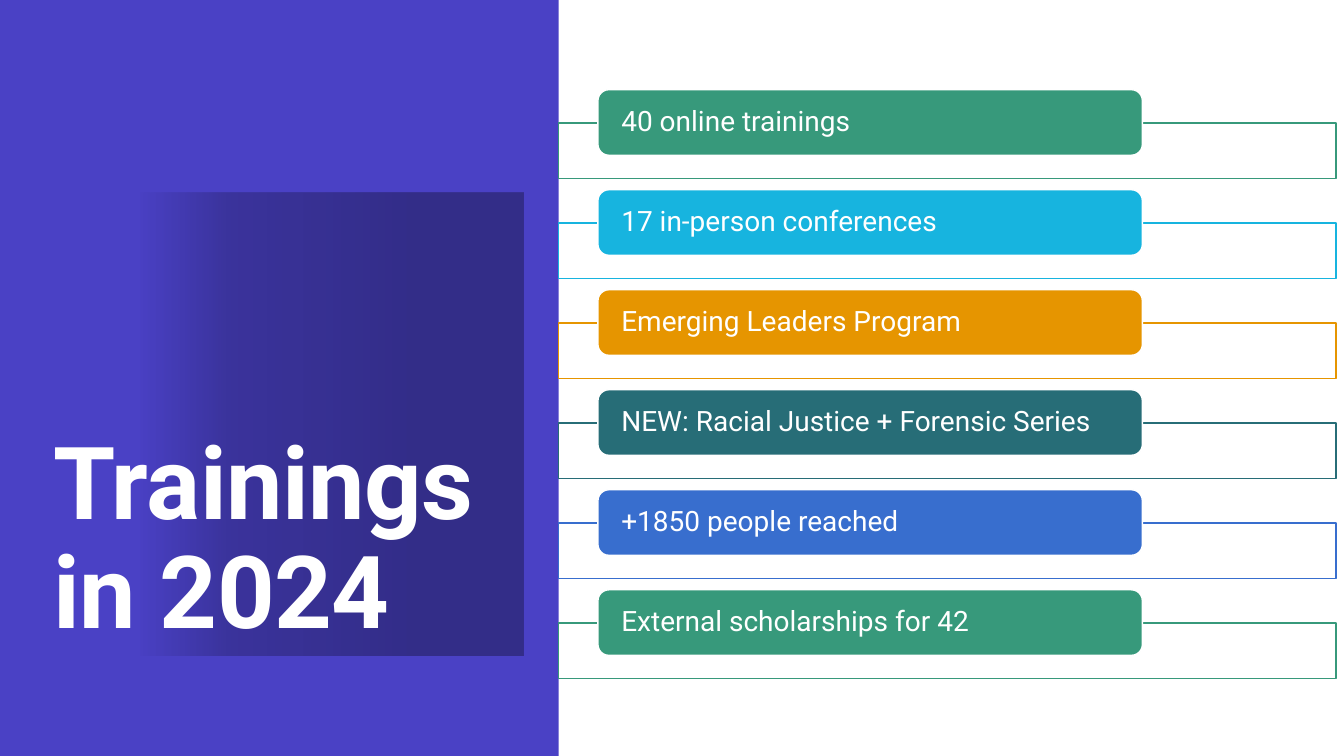
import dataclasses
import lxml.etree
import pptx
import pptx.dml.color
import pptx.enum.shapes
import pptx.enum.text
import pptx.oxml.ns
import pptx.shapes.autoshape
import pptx.util

RGBColor = pptx.dml.color.RGBColor
Kind = pptx.enum.shapes.MSO_SHAPE
Anchor = pptx.enum.text.MSO_ANCHOR
Shape = pptx.shapes.autoshape.Shape
qn = pptx.oxml.ns.qn

WHITE = RGBColor(0xFF, 0xFF, 0xFF)
PURPLE = RGBColor(0x4A, 0x41, 0xC5)
GREEN = RGBColor(0x37, 0x99, 0x7B)
CYAN = RGBColor(0x17, 0xB4, 0xDF)
AMBER = RGBColor(0xE6, 0x95, 0x00)
TEAL = RGBColor(0x27, 0x6D, 0x77)
BLUE = RGBColor(0x38, 0x6E, 0xCE)

FONT = "Roboto"
WIDTH = pptx.util.Inches(13.33)
HEIGHT = pptx.util.Inches(7.5)
STEP = 13.23


@dataclasses.dataclass(frozen=True)
class Box:
    """Left, top, width and height as percent of the slide."""

    left: float
    top: float
    width: float
    height: float

    def down(self, row: int) -> "Box":
        return dataclasses.replace(self, top=self.top + row * STEP)


@dataclasses.dataclass(frozen=True)
class Item:
    label: str
    color: RGBColor


PANEL = Box(0, 0, 41.56, 100)
TITLE = Box(3.23, 25.47, 35.71, 61.2)
FRAME = Box(41.56, 16.27, 57.84, 7.33)
BAR = Box(44.49, 11.87, 40.51, 8.67)

FADE = [(0, 0), (20, 0), (38, 20), (77, 30), (100, 30)]

ITEMS = [
    Item("40 online trainings", GREEN),
    Item("17 in-person conferences", CYAN),
    Item("Emerging Leaders Program", AMBER),
    Item("NEW: Racial Justice + Forensic Series", TEAL),
    Item("+1850 people reached", BLUE),
    Item("External scholarships for 42", GREEN),
]


def add_box(slide, kind: Kind, box: Box, fill: RGBColor,
            line: RGBColor | None = None) -> Shape:
    shape = slide.shapes.add_shape(
        kind,
        round(WIDTH * box.left / 100), round(HEIGHT * box.top / 100),
        round(WIDTH * box.width / 100), round(HEIGHT * box.height / 100))
    shape.shadow.inherit = False
    shape.fill.solid()
    shape.fill.fore_color.rgb = fill
    if line is None:
        shape.line.fill.background()
    else:
        shape.line.color.rgb = line
        shape.line.width = pptx.util.Pt(1)
    return shape


def set_alpha(color: lxml.etree._Element, share: int) -> None:
    lxml.etree.SubElement(color, qn("a:alpha"), val=str(share * 1000))


def set_fade(shape: Shape) -> None:
    shape.fill.gradient()
    shape.fill.gradient_angle = 0
    stops = shape.element.spPr.find(qn("a:gradFill")).find(qn("a:gsLst"))
    for old in list(stops):
        stops.remove(old)
    for place, share in FADE:
        stop = lxml.etree.SubElement(stops, qn("a:gs"), pos=str(place * 1000))
        color = lxml.etree.SubElement(stop, qn("a:srgbClr"), val="000000")
        set_alpha(color, share)


def set_text(shape: Shape, text: str, size: int, anchor: Anchor,
             bold: bool = False) -> None:
    frame = shape.text_frame
    frame.text = text
    frame.word_wrap = True
    frame.vertical_anchor = anchor
    para = frame.paragraphs[0]
    para.alignment = pptx.enum.text.PP_ALIGN.LEFT
    para.line_spacing = 0.9
    font = para.runs[0].font
    font.name = FONT
    font.size = pptx.util.Pt(size)
    font.bold = bold
    font.color.rgb = WHITE


def add_title(slide) -> None:
    title = add_box(slide, Kind.RECTANGLE, TITLE, PURPLE)
    set_fade(title)
    set_text(title, "Trainings in 2024", 72, Anchor.BOTTOM, bold=True)
    run = title.text_frame.paragraphs[0].runs[0]
    run.font._element.set("spc", "-40")


def add_item(slide, item: Item, row: int) -> None:
    frame = add_box(slide, Kind.RECTANGLE, FRAME.down(row), WHITE, item.color)
    set_alpha(frame.element.spPr.find(qn("a:solidFill"))[0], 90)
    bar = add_box(slide, Kind.ROUNDED_RECTANGLE, BAR.down(row), item.color, WHITE)
    set_text(bar, item.label, 20, Anchor.MIDDLE)
    text = bar.text_frame
    text.margin_left = text.margin_right = pptx.util.Inches(0.2)
    text.margin_top = text.margin_bottom = 0


def main() -> None:
    deck = pptx.Presentation()
    deck.slide_width = WIDTH
    deck.slide_height = HEIGHT
    slide = deck.slides.add_slide(deck.slide_layouts[6])
    add_box(slide, Kind.RECTANGLE, PANEL, PURPLE)
    add_title(slide)
    for row, item in enumerate(ITEMS):
        add_item(slide, item, row)
    deck.save("out.pptx")


if __name__ == "__main__":
    main()
